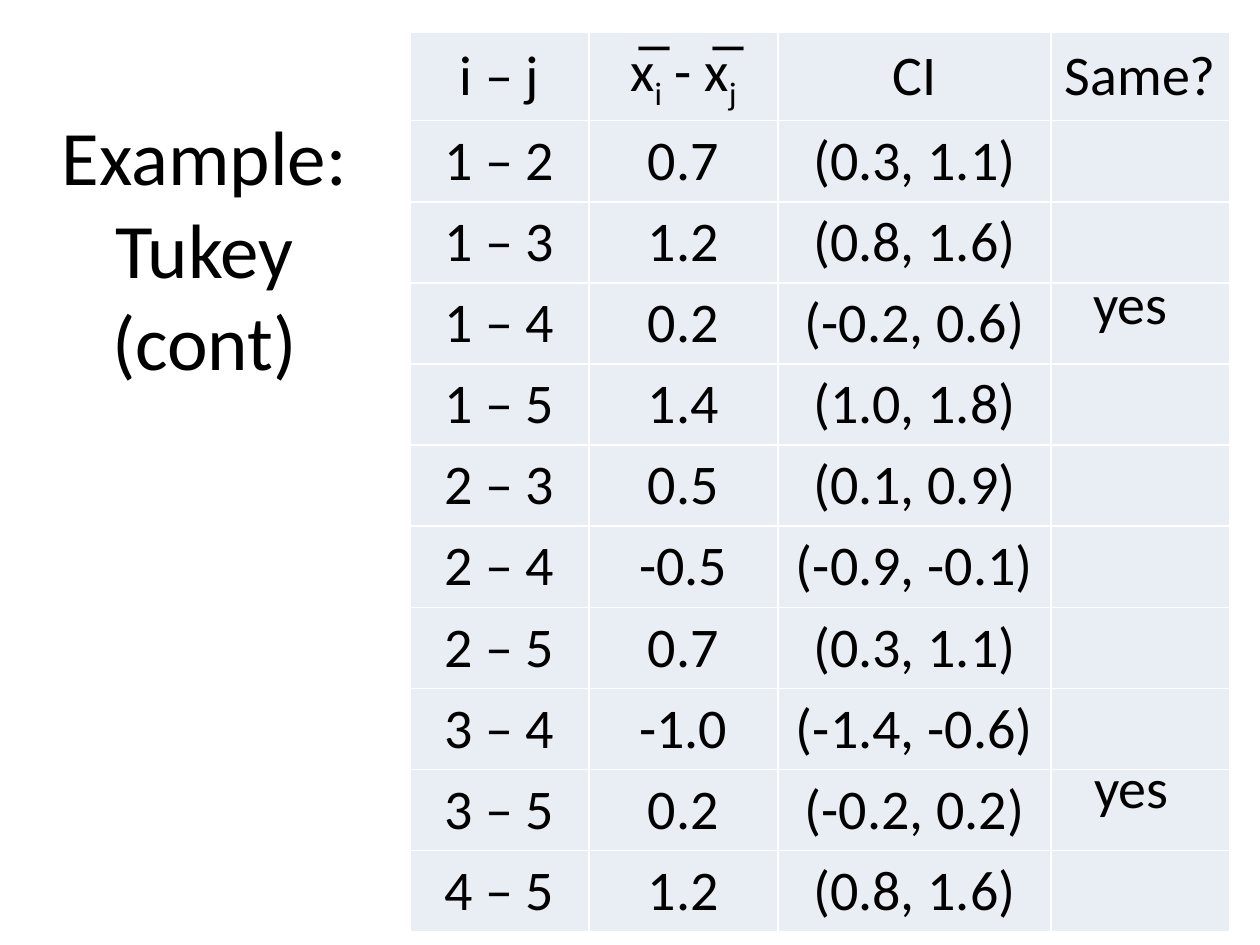
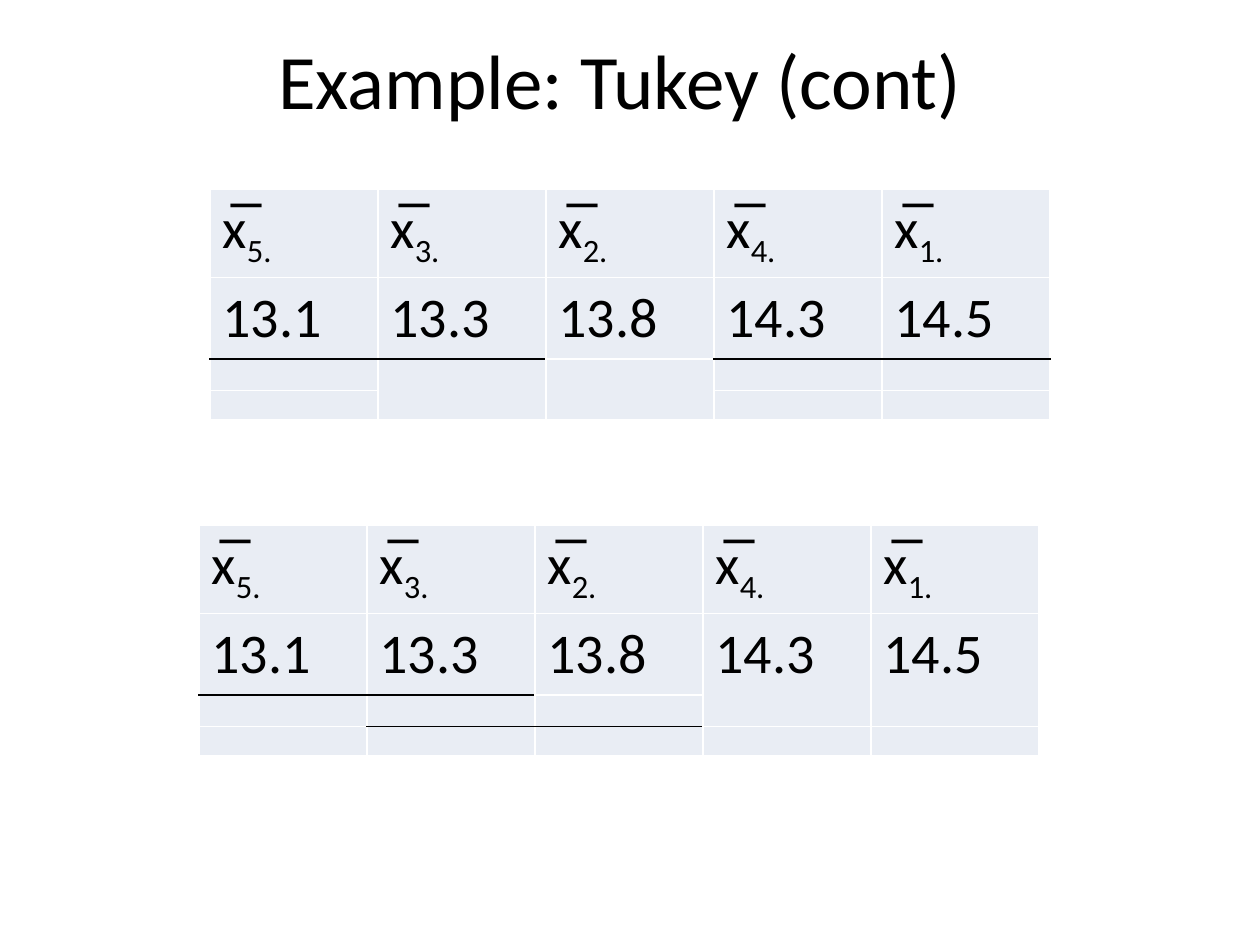
from lxml.etree import SubElement
from pptx import Presentation
from pptx.dml.color import RGBColor
from pptx.enum.text import MSO_ANCHOR, MSO_AUTO_SIZE, PP_ALIGN
from pptx.oxml.ns import qn
from pptx.util import Emu, Pt

PX = 914400 // 126
COLORS = {"text": "000000", "cell": "E9EDF4", "grid": "FFFFFF"}
FONT = "Calibri"
TITLE_SIZE, BODY_SIZE = 44, 32

# Content: text after "_" up to the next space is a subscript
TITLE = "Example: Tukey (cont)"
COMPARISONS = [
    ("i – j", "x̅_i - x̅_j", "CI", "Same?"),
    ("1 – 2", "0.7", "(0.3, 1.1)", ""),
    ("1 – 3", "1.2", "(0.8, 1.6)", ""),
    ("1 – 4", "0.2", "(-0.2, 0.6)", ""),
    ("1 – 5", "1.4", "(1.0, 1.8)", ""),
    ("2 – 3", "0.5", "(0.1, 0.9)", ""),
    ("2 – 4", "-0.5", "(-0.9, -0.1)", ""),
    ("2 – 5", "0.7", "(0.3, 1.1)", ""),
    ("3 – 4", "-1.0", "(-1.4, -0.6)", ""),
    ("3 – 5", "0.2", "(-0.2, 0.2)", ""),
    ("4 – 5", "1.2", "(0.8, 1.6)", ""),
]
SAME_MARKS = [("yes", 1081, 262), ("yes", 1082, 746)]
MEANS = [
    ("x̅_5.", "x̅_3.", "x̅_2.", "x̅_4.", "x̅_1."),
    ("13.1", "13.3", "13.8", "14.3", "14.5"),
    ("",) * 5,
    ("",) * 5,
]
# Lines below a row, one letter a column: K black, W white, - none
GROUPINGS = [
    (210, 189, {1: "KKWKK", 2: "W--WW"}),
    (199, 525, {1: "KKW--", 2: "WKKWW"}),
]
LINE_COLORS = {"K": COLORS["text"], "W": COLORS["grid"], "-": None}

# Layout
COMPARISON_COLS, COMPARISON_ROWS = [179, 189, 273, 179], [76] * 11
MEAN_COLS, MEAN_ROWS = [168] * 5, [76, 76, 23, 29]
EMPTY_SIZES = {2: 9, 3: 6}


def px(*lengths):
    return [Emu(length * PX) for length in lengths]


def style_run(run, size):
    run.font.name, run.font.size = FONT, Pt(size)
    run.font.color.rgb = RGBColor.from_string(COLORS["text"])


def add_slide(title_box):
    slide = deck.slides.add_slide(deck.slide_layouts[5])
    title = slide.shapes.title
    title.left, title.top, title.width, title.height = px(*title_box)
    frame = title.text_frame
    frame.text = TITLE
    frame.vertical_anchor = MSO_ANCHOR.MIDDLE
    frame.auto_size = MSO_AUTO_SIZE.NONE
    frame.paragraphs[0].alignment = PP_ALIGN.CENTER
    style_run(frame.paragraphs[0].runs[0], TITLE_SIZE)
    return slide


def write_math(paragraph, text):
    for i, part in enumerate(text.split("_")):
        subscript, space, rest = part.partition(" ") if i else ("", "", part)
        for piece, baseline in ((subscript, "-25000"), (space + rest, None)):
            if piece:
                run = paragraph.add_run()
                run.text = piece
                style_run(run, BODY_SIZE)
                if baseline:
                    run.font._element.set("baseline", baseline)


def set_borders(cell, above, below):
    properties = cell._tc.get_or_add_tcPr()
    for side, letter in (("L", "W"), ("R", "W"), ("T", above), ("B", below)):
        line = SubElement(properties, qn("a:ln" + side), w=str(Pt(1)))
        color = LINE_COLORS[letter]
        fill = SubElement(line, qn("a:solidFill" if color else "a:noFill"))
        if color:
            SubElement(fill, qn("a:srgbClr"), val=color)


def add_grid(slide, left, top, rows, widths, heights, lines_below={}, centred=False):
    x, y, width, height = px(left, top, sum(widths), sum(heights))
    grid = slide.shapes.add_table(len(rows), len(widths), x, y, width, height).table
    grid.first_row = grid.horz_banding = False
    for column, size in zip(grid.columns, px(*widths)):
        column.width = size
    for row, size in zip(grid.rows, px(*heights)):
        row.height = size
    plain = "W" * len(widths)
    for r, row in enumerate(rows):
        for c, text in enumerate(row):
            cell = grid.cell(r, c)
            set_borders(cell, lines_below.get(r - 1, plain)[c], lines_below.get(r, plain)[c])
            cell.fill.solid()
            cell.fill.fore_color.rgb = RGBColor.from_string(COLORS["cell"])
            paragraph = cell.text_frame.paragraphs[0]
            if centred:
                cell.vertical_anchor = MSO_ANCHOR.MIDDLE
                paragraph.alignment = PP_ALIGN.CENTER
            if text:
                write_math(paragraph, text)
            else:
                size = EMPTY_SIZES.get(r, BODY_SIZE) if not centred else BODY_SIZE
                SubElement(paragraph._p, qn("a:endParaRPr"), sz=str(size * 100))


deck = Presentation()
deck.slide_width, deck.slide_height = px(1260, 945)

# Pairwise comparisons
comparison_slide = add_slide((42, 32, 325, 431))
add_grid(comparison_slide, 410, 32, COMPARISONS, COMPARISON_COLS, COMPARISON_ROWS, centred=True)
for mark, left, top in SAME_MARKS:
    frame = comparison_slide.shapes.add_textbox(*px(left, top, 101, 81)).text_frame
    frame.word_wrap = False
    frame.auto_size = MSO_AUTO_SIZE.SHAPE_TO_FIT_TEXT
    frame.text = mark
    style_run(frame.paragraphs[0].runs[0], BODY_SIZE)

# Ordered means, underlined by group
means_slide = add_slide((53, 0, 1134, 158))
for left, top, lines_below in GROUPINGS:
    add_grid(means_slide, left, top, MEANS, MEAN_COLS, MEAN_ROWS, lines_below)

deck.save("out.pptx")
